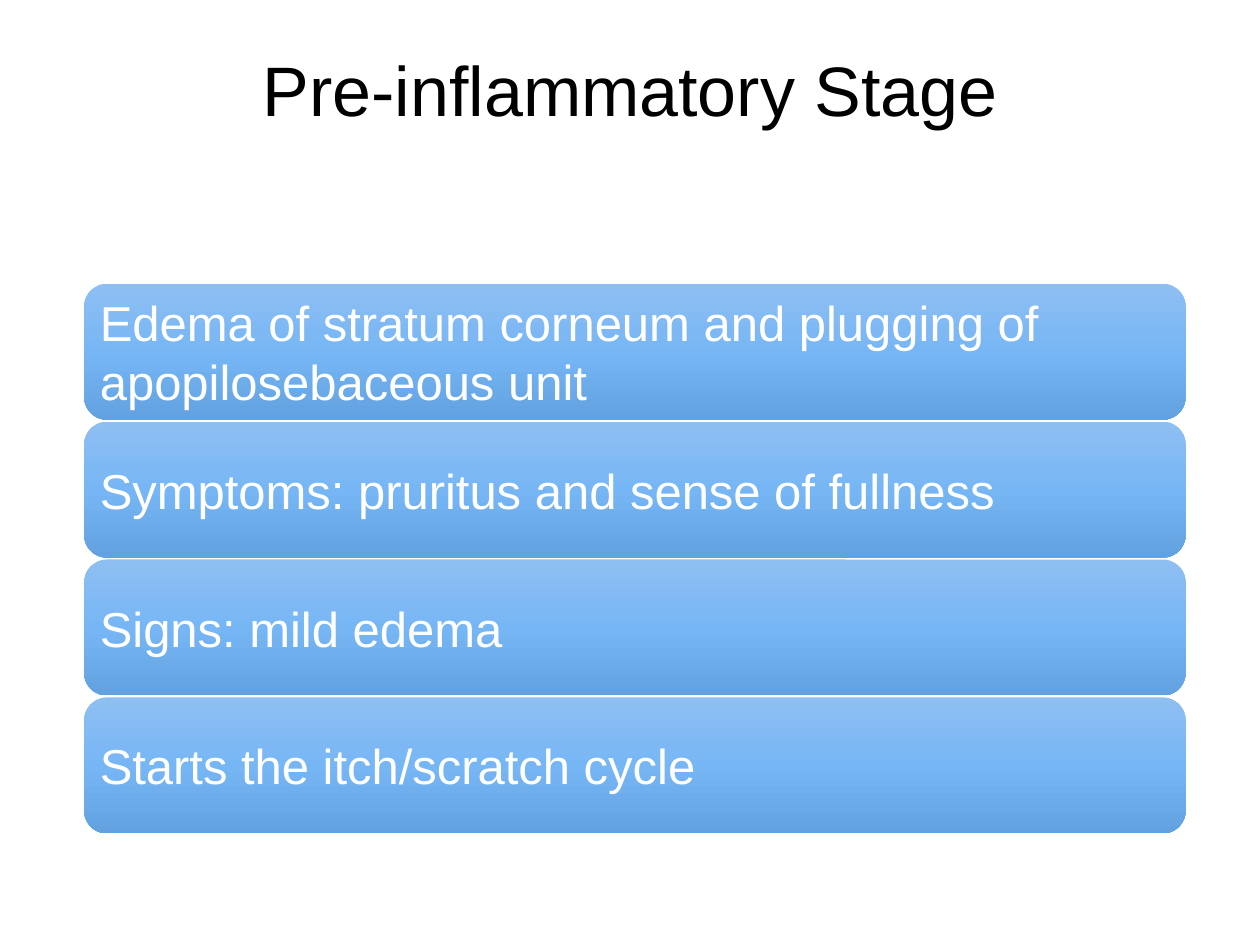
from copy import deepcopy

from pptx import Presentation
from pptx.dml.color import RGBColor
from pptx.enum.shapes import MSO_SHAPE
from pptx.enum.text import MSO_ANCHOR, PP_ALIGN
from pptx.util import Cm, Pt

ROUND = MSO_SHAPE.ROUNDED_RECTANGLE
TOP, MIDDLE = MSO_ANCHOR.TOP, MSO_ANCHOR.MIDDLE
LEFT, CENTER = PP_ALIGN.LEFT, PP_ALIGN.CENTER

BLACK = RGBColor(0x00, 0x00, 0x00)
WHITE = RGBColor(0xFF, 0xFF, 0xFF)
LIGHT = RGBColor(0x8E, 0xBF, 0xF2)
MID = RGBColor(0x77, 0xB6, 0xF5)
DARK = RGBColor(0x63, 0xA2, 0xE1)

POINTS = [
    "Edema of stratum corneum and plugging of apopilosebaceous unit",
    "Symptoms: pruritus and sense of fullness",
    "Signs: mild edema",
    "Starts the itch/scratch cycle",
]
STOPS = [(0, LIGHT), (0.5, MID), (1, DARK)]
FRAME = {"word_wrap": True, "margin_left": Cm(0.18), "margin_right": Cm(0.18),
         "margin_top": Cm(0.18), "margin_bottom": Cm(0.18)}


def write(shape, text, align, anchor, look):
    frame = shape.text_frame
    for key, value in (FRAME | {"vertical_anchor": anchor}).items():
        setattr(frame, key, value)
    para = frame.paragraphs[0]
    para.alignment = align
    run = para.add_run()
    run.text = text
    for key, value in look.items():
        setattr(run.font, key, value)
    run.font.color.rgb = BLACK if anchor == TOP else WHITE


deck = Presentation()
deck.slide_width, deck.slide_height = Cm(25.4), Cm(19.05)
slide = deck.slides.add_slide(deck.slide_layouts[6])

# Title
title = slide.shapes.add_textbox(Cm(1.27), Cm(0.76), Cm(22.86), Cm(3.18))
write(title, "Pre-inflammatory Stage", CENTER, TOP,
      {"name": "Arial", "size": Pt(40)})

# Stacked bars
for row, text in enumerate(POINTS):
    bar = slide.shapes.add_shape(
        ROUND, Cm(1.7), Cm(5.72 + row * 2.78), Cm(22.2), Cm(2.74))
    bar.shadow.inherit = False
    bar.line.fill.background()

    # Three-stop gradient, light at the top
    bar.fill.gradient()
    bar.fill.gradient_angle = 270
    first = bar._element.spPr.xpath(".//a:gs")[0]
    first.addnext(deepcopy(first))
    for stop, (place, color) in zip(bar.fill.gradient_stops, STOPS):
        stop.position = place
        stop.color.rgb = color

    write(bar, text, LEFT, MIDDLE, {"name": "Arial", "size": Pt(28)})

deck.save("out.pptx")
